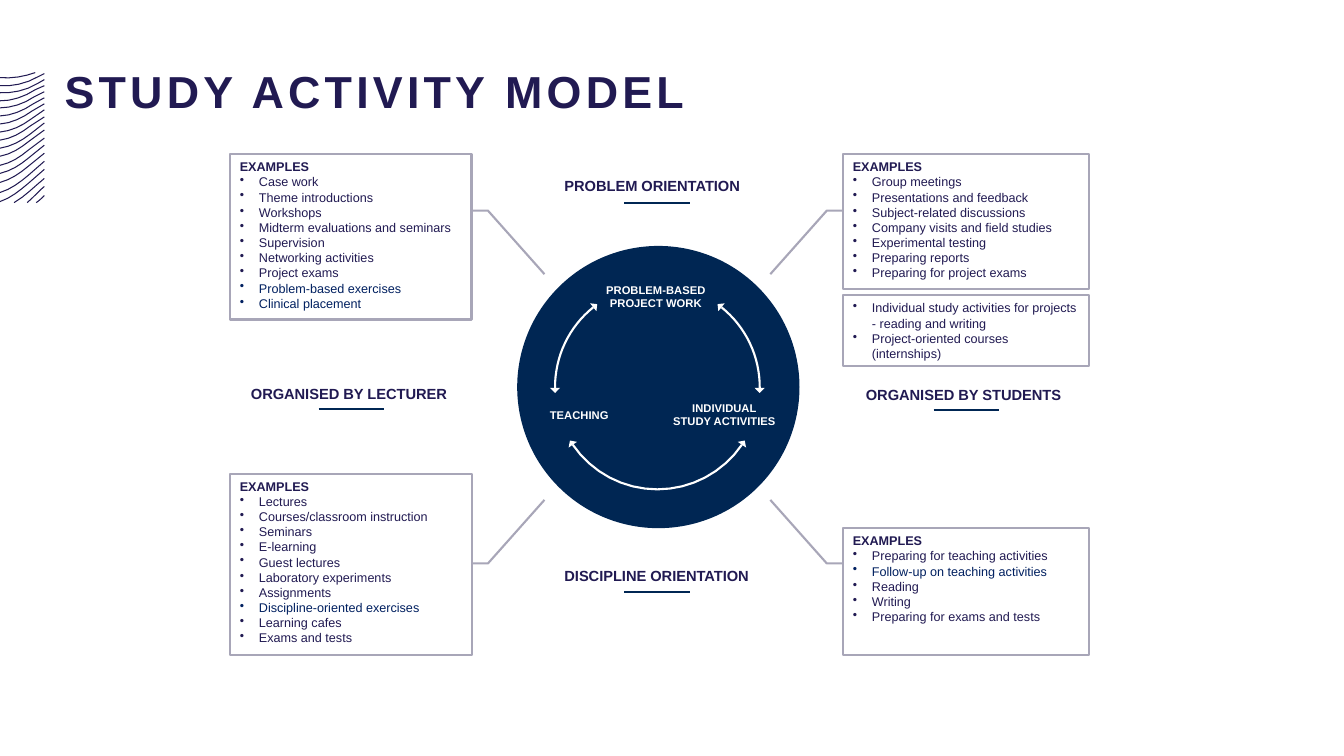
import math

import pptx
import pptx.dml.color
import pptx.enum.shapes
import pptx.enum.text
import pptx.oxml
import pptx.oxml.ns
import pptx.util

Inches = pptx.util.Inches
Pt = pptx.util.Pt
INK, NAVY, BLUE, GREY, WHITE = "211A52", "002653", "002060", "A8A6B8", "FFFFFF"
CENTRE_X, CENTRE_Y = 6.52, 3.84

EXAMPLE_BOXES = [
    (8.36, 1.53, 2.44, 1.34, 1.5, "EXAMPLES", [
        "Group meetings", "Presentations and feedback", "Subject-related discussions",
        "Company visits and field studies", "Experimental testing", "Preparing reports",
        "Preparing for project exams"]),
    (2.28, 1.53, 2.4, 1.64, 1.88, "EXAMPLES", [
        "Case work", "Theme introductions", "Workshops", "Midterm evaluations and seminars",
        "Supervision", "Networking activities", "Project exams", "Problem-based exercises",
        "Clinical placement"]),
    (2.28, 4.7, 2.4, 1.8, 1.5, "EXAMPLES", [
        "Lectures", "Courses/classroom instruction", "Seminars", "E-learning",
        "Guest lectures", "Laboratory experiments", "Assignments",
        "Discipline-oriented exercises", "Learning cafes", "Exams and tests"]),
    (8.36, 2.93, 2.44, 0.7, 1.5, None, [
        "Individual study activities for projects\n- reading and writing",
        "Project-oriented courses (internships)"]),
    (8.36, 5.24, 2.44, 1.26, 1.63, "EXAMPLES", [
        "Preparing for teaching activities", "Follow-up on teaching activities", "Reading",
        "Writing", "Preparing for exams and tests"]),
]
BLUE_ITEMS = {"Problem-based exercises", "Clinical placement",
              "Discipline-oriented exercises", "Follow-up on teaching activities"}

AXIS_LABELS = [
    (8.49, 3.78, 2.17, "ORGANISED BY STUDENTS", 9.26, 4.07),
    (2.39, 3.77, 2.18, "ORGANISED BY LECTURER", 3.16, 4.06),
    (5.5, 5.57, 2.08, "DISCIPLINE ORIENTATION", 6.19, 5.87),
    (5.5, 1.71, 1.99, "PROBLEM ORIENTATION", 6.19, 2.01),
]
CIRCLE_LABELS = [
    (5.91, 2.76, 1.19, 0.37, ["PROBLEM-BASED", "PROJECT WORK"]),
    (5.35, 4, 0.79, 0.24, ["TEACHING"]),
    (6.57, 3.93, 1.23, 0.37, ["INDIVIDUAL", "STUDY ACTIVITIES"]),
]
CYCLE_ARCS = [(-51.2, 0.5), (-180.5, -128.8), (34.3, 145.7)]

WAVES = [
    (0.72, 0.38, 0.76, 0.85), (0.78, 0.37, 0.83, 0.92), (0.84, 0.35, 0.89, 1),
    (0.9, 0.34, 0.96, 1.07), (0.96, 0.33, 1.03, 1.15), (1.02, 0.32, 1.1, 1.23),
    (1.08, 0.31, 1.18, 1.31), (1.15, 0.3, 1.25, 1.39), (1.21, 0.3, 1.33, 1.47),
    (1.28, 0.29, 1.4, 1.55), (1.36, 0.28, 1.49, 1.64), (1.43, 0.28, 1.57, 1.72),
    (1.51, 0.28, 1.65, 1.81), (1.59, 0.28, 1.74, 1.91), (1.67, 0.28, 1.82, 2),
]
SHORT_WAVES = [
    [(0.35, 0.72), (0.24, 0.76), (0.12, 0.78), (0, 0.77)],
    [(0.44, 1.77), (0.34, 1.85), (0.26, 1.94), (0.14, 2.01)],
    [(0.44, 1.85), (0.39, 1.89), (0.34, 1.95), (0.27, 2.01)],
    [(0.44, 1.94), (0.42, 1.96), (0.39, 1.99), (0.36, 2.01)],
]


def colour(value):
    return pptx.dml.color.RGBColor.from_string(value)


def bezier(a, b, c, d, steps=4):
    points = []
    for step in range(steps + 1):
        t = step / steps
        weights = ((1 - t) ** 3, 3 * t * (1 - t) ** 2, 3 * t * t * (1 - t), t ** 3)
        points.append(tuple(sum(w * p[axis] for w, p in zip(weights, (a, b, c, d)))
                            for axis in (0, 1)))
    return points


def long_wave(right, knee_x, knee_y, left, bend):
    knee = (knee_x, knee_y)
    inner = bezier(knee, (0.7 * knee_x, knee_y + 0.07), (0.11, left - bend), (0, left))
    return [(0.44, right + 0.01)] + inner


class Slide:
    font = "Arial"

    def __init__(self, deck):
        self.page = deck.slides.add_slide(deck.slide_layouts[5])
        self.shapes = self.page.shapes

    def paint(self, shape, fill=None, line=None, width=1.5):
        shape.shadow.inherit = False
        if fill:
            shape.fill.solid()
            shape.fill.fore_color.rgb = colour(fill)
        else:
            shape.fill.background()
        if line:
            shape.line.color.rgb = colour(line)
            shape.line.width = Pt(width)
        else:
            shape.line.fill.background()

    def outline(self, *contours, fill=None, line=None, width=1.5):
        builder = None
        for contour in contours:
            points = [(Inches(x), Inches(y)) for x, y in contour]
            if builder is None:
                builder = self.shapes.build_freeform(*points[0], scale=1.0)
            else:
                builder.move_to(*points[0])
            builder.add_line_segments(points[1:], close=fill is not None)
        self.paint(builder.convert_to_shape(), fill, line, width)

    def span(self, para, text, size, ink=INK, bold=False):
        for index, part in enumerate(text.split("\n")):
            if index:
                para.add_line_break()
            span = para.add_run()
            span.text = part
            span.font.name = self.font
            span.font.size = Pt(size)
            span.font.bold = bold
            span.font.color.rgb = colour(ink)
        return span

    def title(self, text):
        box = self.shapes.title
        box.left, box.top, box.width, box.height = map(Inches, (0.64, 0.4, 10.05, 0.77))
        frame = box.text_frame
        frame.margin_left = frame.margin_right = frame.margin_bottom = 0
        frame.margin_top = Inches(0.21)
        frame.vertical_anchor = pptx.enum.text.MSO_ANCHOR.BOTTOM
        para = frame.paragraphs[0]
        para.alignment = pptx.enum.text.PP_ALIGN.LEFT
        self.span(para, text, 32, bold=True).font._element.set("spc", "300")

    def label(self, x, y, width, height, lines, size, ink, align):
        box = self.shapes.add_textbox(*map(Inches, (x, y, width, height)))
        frame = box.text_frame
        frame.word_wrap = False
        frame.auto_size = pptx.enum.text.MSO_AUTO_SIZE.SHAPE_TO_FIT_TEXT
        for index, line in enumerate(lines):
            para = frame.add_paragraph() if index else frame.paragraphs[0]
            para.alignment = align
            self.span(para, line, size, ink, True)

    def bullet(self, para):
        properties = para._p.get_or_add_pPr()
        properties.set("marL", str(Inches(0.19)))
        properties.set("indent", str(-Inches(0.19)))
        properties.append(pptx.oxml.parse_xml(
            f'<a:buChar {pptx.oxml.ns.nsdecls("a")} char="•"/>'))

    def preset(self, kind, x, y, width, height, **style):
        shape = self.shapes.add_shape(kind, *map(Inches, (x, y, width, height)))
        self.paint(shape, **style)
        return shape

    def example_box(self, x, y, width, height, border, heading, items):
        box = self.preset(pptx.enum.shapes.MSO_SHAPE.RECTANGLE, x, y, width, height, line=GREY)
        box.line.width = Pt(border)
        frame = box.text_frame
        frame.word_wrap = True
        frame.vertical_anchor = pptx.enum.text.MSO_ANCHOR.TOP
        for index, text in enumerate(([heading] if heading else []) + items):
            para = frame.add_paragraph() if index else frame.paragraphs[0]
            para.alignment = pptx.enum.text.PP_ALIGN.LEFT
            if text != heading:
                self.bullet(para)
            self.span(para, text, 9, BLUE if text in BLUE_ITEMS else INK, text == heading)

    def rule(self, x, y, length):
        line = self.shapes.add_connector(pptx.enum.shapes.MSO_CONNECTOR.STRAIGHT,
                                         *map(Inches, (x, y, x + length, y)))
        line.line.color.rgb = colour(NAVY)
        line.line.width = Pt(1.5)
        line._element.spPr.append(pptx.oxml.parse_xml(
            f'<a:effectLst {pptx.oxml.ns.nsdecls("a")}/>'))

    def cycle_arc(self, start, end, radius=1.015, steps=16):
        def at(degrees, reach=radius, forward=0):
            angle = math.radians(degrees)
            return (CENTRE_X + reach * math.cos(angle) - forward * math.sin(angle),
                    CENTRE_Y + reach * math.sin(angle) + forward * math.cos(angle))

        self.outline([at(start + (end - start) * step / steps) for step in range(steps + 1)],
                     line=WHITE)
        for degrees, tip in ((start, -0.05), (end, 0.05)):
            self.outline([at(degrees, radius - 0.05), at(degrees, radius + 0.05),
                          at(degrees, forward=tip)], fill=WHITE)


def main():
    deck = pptx.Presentation()
    deck.slide_width, deck.slide_height = Inches(13.33), Inches(7.5)
    slide = Slide(deck)
    waves = [long_wave(*wave, bend=0.05 * index / len(WAVES) - 0.01)
             for index, wave in enumerate(WAVES)]
    slide.outline(*waves, *(bezier(*curve) for curve in SHORT_WAVES), line=INK, width=0.75)
    slide.title("STUDY ACTIVITY MODEL")
    slide.preset(pptx.enum.shapes.MSO_SHAPE.OVAL, 5.13, 2.44, 2.8, 2.8, fill=NAVY)
    for side_y in (-1, 1):
        for side_x in (1, -1):
            slide.outline([(CENTRE_X + side_x * dx, CENTRE_Y + side_y * dy)
                           for dx, dy in ((1.12, 1.12), (1.68, 1.75), (1.84, 1.75))], line=GREY)
    for box in EXAMPLE_BOXES:
        slide.example_box(*box)
    for arc in CYCLE_ARCS:
        slide.cycle_arc(*arc)
    for x, y, width, text, rule_x, rule_y in AXIS_LABELS:
        slide.rule(rule_x, rule_y, 0.65)
        slide.label(x, y, width, 0.28, [text], 10.5, INK, pptx.enum.text.PP_ALIGN.LEFT)
    for x, y, width, height, lines in CIRCLE_LABELS:
        slide.label(x, y, width, height, lines, 8, WHITE, pptx.enum.text.PP_ALIGN.CENTER)
    deck.save("out.pptx")


if __name__ == "__main__":
    main()
